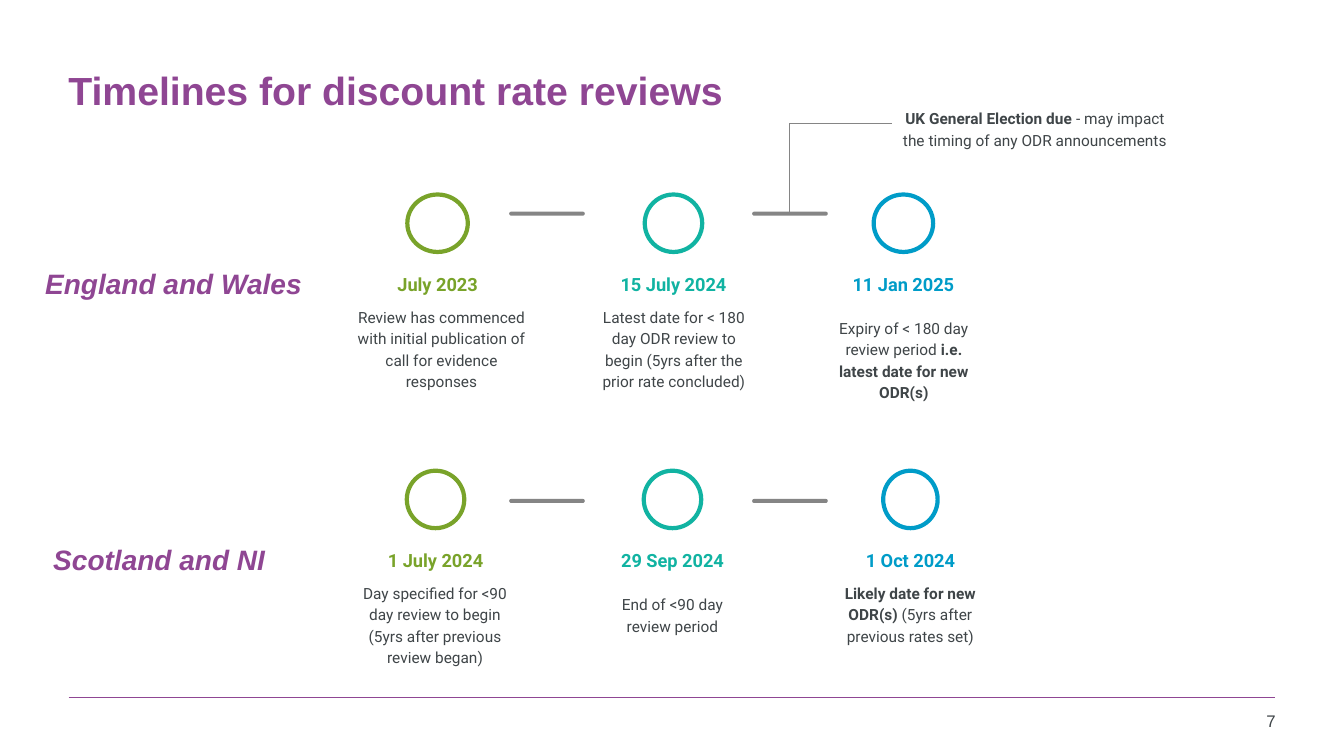
from lxml import etree
from pptx import Presentation
from pptx import util as u
from pptx.dml.color import RGBColor
from pptx.enum import shapes, text
from pptx.oxml import ns

PURPLE, GREEN, TEAL, BLUE = "8F4693", "79A32A", "11B3A2", "009CC8"
GREY, INK = "858585", "3F4548"
LEFT, CENTRE, RIGHT = text.PP_ALIGN.LEFT, text.PP_ALIGN.CENTER, text.PP_ALIGN.RIGHT
TOP, MIDDLE, BOTTOM = text.MSO_ANCHOR.TOP, text.MSO_ANCHOR.MIDDLE, text.MSO_ANCHOR.BOTTOM


def colour(target, value):
    """Set a fill, line or font colour from a hex string."""
    if hasattr(target, "solid"):
        target.solid()
        target.fore_color.rgb = RGBColor.from_string(value)
    else:
        target.color.rgb = RGBColor.from_string(value)


def add_text(box, runs, size, value, font="Roboto", align=CENTRE, anchor=TOP,
             spacing=1.15, inset=0.1, italic=False):
    """Add a one-paragraph text box; runs are (words, bold) pairs."""
    frame = slide.shapes.add_textbox(*[u.Inches(n) for n in box]).text_frame
    frame.word_wrap = True
    frame.vertical_anchor = anchor
    frame.margin_left = frame.margin_right = u.Inches(0.1)
    frame.margin_top = frame.margin_bottom = u.Inches(inset)
    paragraph = frame.paragraphs[0]
    paragraph.alignment = align
    paragraph.line_spacing = spacing
    for words, bold in runs:
        run = paragraph.add_run()
        run.text = words
        run.font.name, run.font.size = font, u.Pt(size)
        run.font.bold, run.font.italic = bold, italic
        colour(run.font, value)


presentation = Presentation()
presentation.slide_width, presentation.slide_height = u.Inches(13.33), u.Inches(7.5)
slide = presentation.slides.add_slide(presentation.slide_layouts[6])

# Footer rule and page number
rule = slide.shapes.add_connector(shapes.MSO_CONNECTOR.STRAIGHT, u.Inches(0.68), u.Inches(6.92),
                                  u.Inches(12.65), u.Inches(6.92))
colour(rule.line, PURPLE)
rule.line.width = u.Pt(1)
etree.SubElement(rule.element.spPr, ns.qn("a:effectLst"))
add_text((11.81, 7, 0.94, 0.37), [("7", False)], 12, INK, "Arial", RIGHT, spacing=1, inset=0.05)

# Slide title
add_text((0.58, 0.27, 12.09, 1.25), [("Timelines for discount rate reviews", True)], 28, PURPLE,
         "Arial", LEFT, MIDDLE, spacing=1, inset=0.05)

# Timelines: region, region left, row top, dash top, milestones
# Milestone: centre, ring width, date, note left, note width, note drop, note runs
timelines = [
    ("England and Wales", 0.35, 1.93, 2.1, [
        (4.34, 0.6, "July 2023", 3.38, 2, 1,
         [("Review has commenced with initial publication of call for evidence responses", False)]),
        (6.68, 0.57, "15 July 2024", 5.86, 1.65, 1,
         [("Latest date for < 180 day ODR review to begin (5yrs after the prior rate concluded)",
           False)]),
        (8.96, 0.59, "11 Jan 2025", 8.11, 1.71, 1.11,
         [("Expiry of < 180 day review period ", False),
          ("i.e. latest date for new ODR(s)", True)]),
    ]),
    ("Scotland and NI", 0.43, 4.67, 4.95, [
        (4.32, 0.57, "1 July 2024", 3.49, 1.65, 1,
         [("Day specified for <90 day review to begin (5yrs after previous review began)", False)]),
        (6.67, 0.57, "29 Sep 2024", 5.85, 1.64, 1.11,
         [("End of <90 day review period", False)]),
        (9.03, 0.54, "1 Oct 2024", 8.25, 1.56, 1,
         [("Likely date for new ODR(s)", True), (" (5yrs after previous rates set)", False)]),
    ]),
]
RING_HEIGHT, DATE_WIDTH, DATE_DROP = 0.57, 1.7, 0.67

for region, region_left, top, dash_top, milestones in timelines:
    add_text((region_left, top + 0.5, 2.76, 0.81), [(region, True)], 20, PURPLE, "Arial",
             LEFT, MIDDLE, spacing=0.85, inset=0.05, italic=True)

    # Dashes between the milestones
    for dash_left in (5.05, 7.46):
        dash = slide.shapes.add_shape(shapes.MSO_SHAPE.ROUNDED_RECTANGLE, u.Inches(dash_left),
                                      u.Inches(dash_top), u.Inches(0.75), u.Inches(0.04))
        dash.adjustments[0] = 0.5
        dash.shadow.inherit = False
        colour(dash.fill, GREY)
        dash.line.fill.background()

    # Ring, date and note of each milestone
    for hue, milestone in zip((GREEN, TEAL, BLUE), milestones):
        centre, ring_width, date, note_left, note_width, note_drop, note = milestone
        ring = slide.shapes.add_shape(shapes.MSO_SHAPE.OVAL, u.Inches(centre - ring_width / 2),
                                      u.Inches(top), u.Inches(ring_width), u.Inches(RING_HEIGHT))
        ring.shadow.inherit = False
        ring.fill.background()
        colour(ring.line, hue)
        ring.line.width = u.Pt(3)
        add_text((centre - DATE_WIDTH / 2, top + DATE_DROP, DATE_WIDTH, 0.43), [(date, True)],
                 13, hue, anchor=BOTTOM)
        add_text((note_left, top + note_drop, note_width, 0.81), note, 11, INK)

# Election callout, led from the second dash
builder = slide.shapes.build_freeform(u.Inches(7.83), u.Inches(2.1))
builder.add_line_segments([(u.Inches(7.83), u.Inches(1.23)), (u.Inches(8.85), u.Inches(1.23))],
                          close=False)
leader = builder.convert_to_shape()
leader.shadow.inherit = False
leader.fill.background()
colour(leader.line, GREY)
leader.line.width = u.Pt(0.75)
add_text((8.82, 0.96, 2.89, 0.61),
         [("UK General Election due", True),
          (" - may impact the timing of any ODR announcements", False)], 11, INK)

presentation.save("out.pptx")
